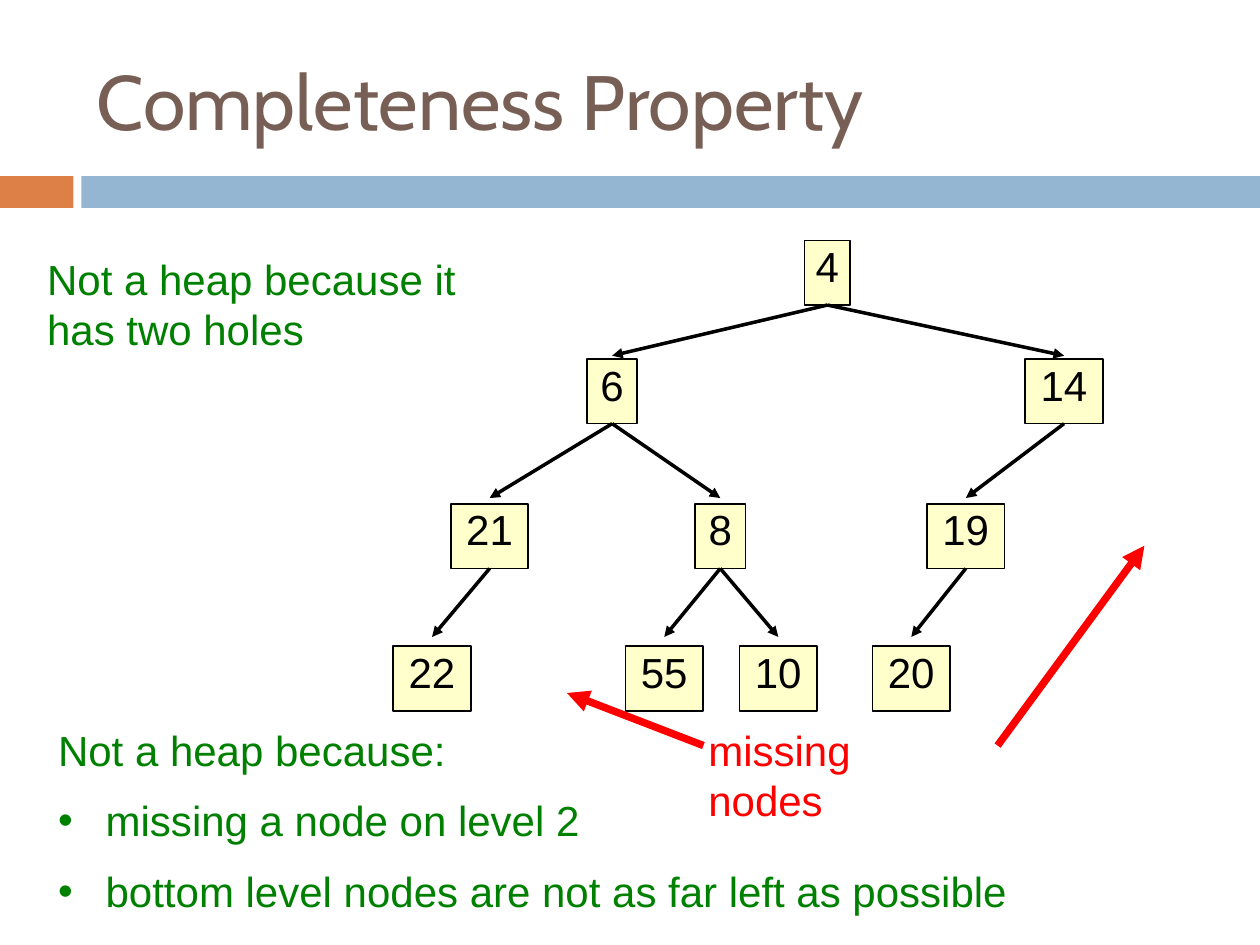
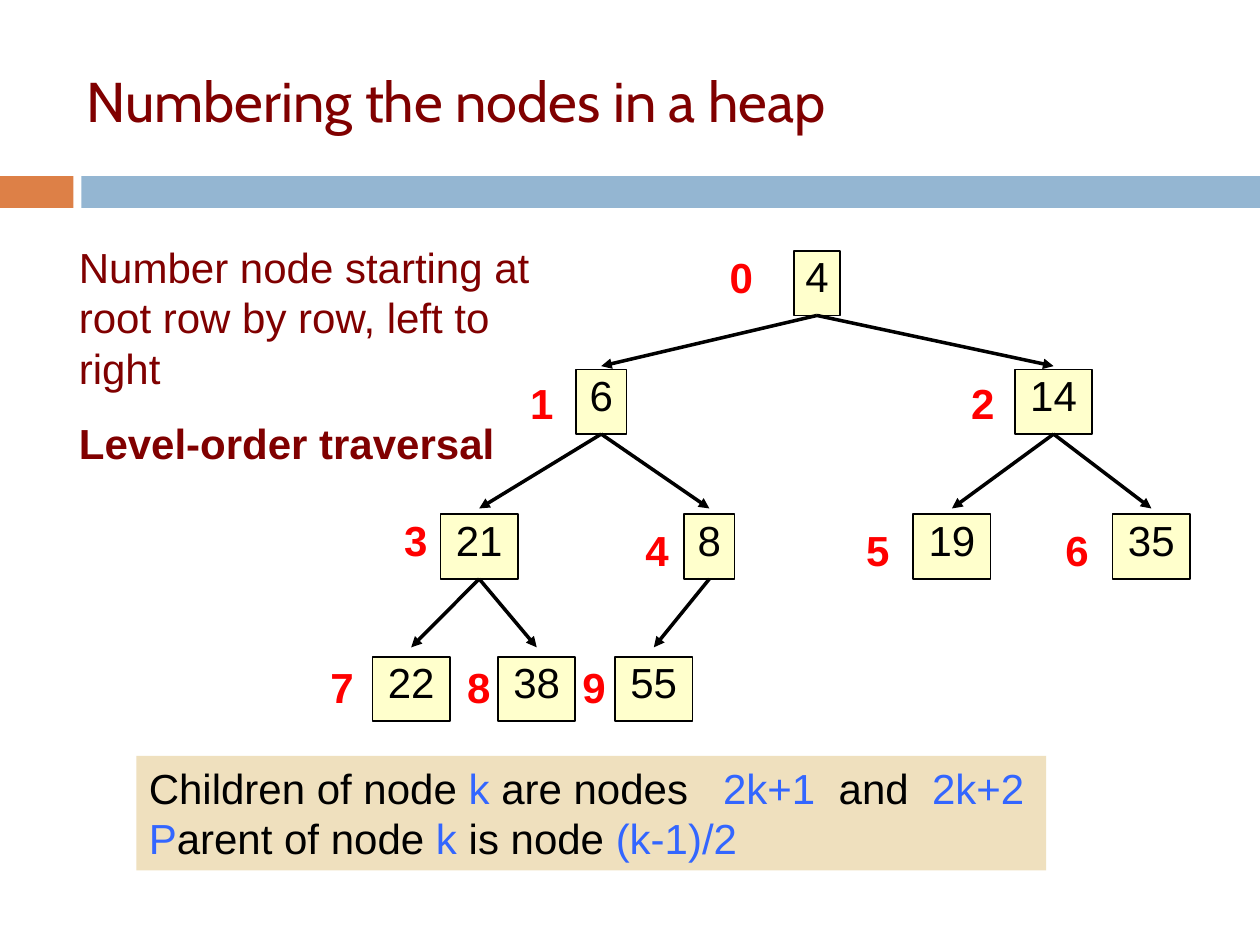
"""Build two slides on heaps: the completeness property and node numbering."""
from lxml import etree
from pptx import Presentation
from pptx.dml.color import RGBColor
from pptx.enum.shapes import MSO_CONNECTOR, MSO_SHAPE
from pptx.enum.text import MSO_ANCHOR, MSO_AUTO_SIZE, PP_ALIGN
from pptx.oxml.ns import qn
from pptx.util import Cm, Pt

RECT = MSO_SHAPE.RECTANGLE
LINE = MSO_CONNECTOR.STRAIGHT
LEFT, MID = PP_ALIGN.LEFT, PP_ALIGN.CENTER
TOP, CENTER = MSO_ANCHOR.TOP, MSO_ANCHOR.MIDDLE
FIXED = MSO_AUTO_SIZE.NONE

BLACK, RED, GREEN, MAROON = "000000", "FF0000", "008000", "800000"
BROWN, BLUE, CREAM, SAND = "775F55", "3366FF", "FFFFCC", "EFE0BE"
ORANGE, STEEL = "DD8047", "94B6D2"

BOX_H = 1.3
ROWS = (4.85, 7.24, 10.16, 13.03)
GAPS = (0, 0.07, 0.12, 0.19)


def paint(hue):
    """Turn a hex string into a colour."""
    return RGBColor.from_string(hue)


def place(shape, left, top, width, height):
    """Move and size a shape in centimetres."""
    shape.left, shape.top = Cm(left), Cm(top)
    shape.width, shape.height = Cm(width), Cm(height)


def block(slide, spot, hue, edge=None):
    """Draw a filled rectangle."""
    shape = slide.shapes.add_shape(RECT, *map(Cm, spot))
    shape.shadow.inherit = False
    shape.fill.solid()
    shape.fill.fore_color.rgb = paint(hue)
    if edge:
        shape.line.color.rgb = paint(edge)
        shape.line.width = Pt(1)
    else:
        shape.line.fill.background()
    return shape


def setup(frame, pads=(0, 0, 0.1, 0), anchor=TOP):
    """Set the wrapping, anchor and insets of a text frame."""
    frame.word_wrap = True
    frame.auto_size = FIXED
    frame.vertical_anchor = anchor
    frame.margin_left, frame.margin_top, frame.margin_right, frame.margin_bottom = map(Cm, pads)


def add_run(para, text, hue, size=24, font="Arial", bold=False, wide=0):
    """Add one formatted run, its letters spaced by wide points."""
    run = para.add_run()
    run.text = text
    run.font.name, run.font.size, run.font.bold = font, Pt(size), bold
    run.font.color.rgb = paint(hue)
    if wide:
        run._r.get_or_add_rPr().set("spc", str(round(wide * 100)))


def shape_para(para, align=LEFT, before=0, margin=0.1, hang=0, mark=None):
    """Set alignment, spacing, indent and bullet."""
    para.alignment = align
    para.space_before = Pt(before)
    props = para._p.get_or_add_pPr()
    props.set("marL", str(Cm(margin)))
    props.set("indent", str(Cm(hang)))
    if mark:
        etree.SubElement(props, qn("a:buChar"), char=mark)
    else:
        etree.SubElement(props, qn("a:buNone"))


def label(slide, spot, text, hue, bold=False):
    """Add a plain text box."""
    frame = slide.shapes.add_textbox(*map(Cm, spot)).text_frame
    setup(frame)
    shape_para(frame.paragraphs[0], before=11.5)
    add_run(frame.paragraphs[0], text, hue, bold=bold)


def arrow(slide, start, end, hue=BLACK, width=2):
    """Draw a straight arrow."""
    link = slide.shapes.add_connector(LINE, *map(Cm, start + end))
    link.line.color.rgb = paint(hue)
    link.line.width = Pt(width)
    etree.SubElement(link.line._get_or_add_ln(), qn("a:tailEnd"), type="triangle")
    etree.SubElement(link._element.spPr, qn("a:effectLst"))
    return link


def node(slide, text, mid, top, width):
    """Draw one tree node centred on mid."""
    box = block(slide, (mid - width / 2, top, width, BOX_H), CREAM, BLACK)
    setup(box.text_frame)
    para = box.text_frame.paragraphs[0]
    shape_para(para, MID, 14)
    add_run(para, text, BLACK)
    return box


def tree(slide, levels, drop=0):
    """Draw a tree from levels of (text, middle, parent)."""
    boxes = {}
    for level, row, gap in zip(levels, ROWS, GAPS):
        top = row + drop
        for text, mid, parent in level:
            width = 1.56 if len(text) > 1 else 1.02 if parent else 0.92
            boxes[text] = node(slide, text, mid, top, width)
            if parent:
                link = arrow(slide, (mid, top - 1), (mid, top - gap))
                link.begin_connect(boxes[parent], 2)


def title(slide, left, text, hue, size):
    """Fill the title placeholder."""
    shape = slide.shapes.title
    place(shape, left, 0.64, 22.66, 2.75)
    setup(shape.text_frame, (0.25, 0.13, 0.25, 0.13), CENTER)
    para = shape.text_frame.paragraphs[0]
    para.alignment = LEFT
    add_run(para, text, hue, size, "Cabin")


def body(slide, spot, lines, hue, before):
    """Fill the body placeholder with (text, bold, mark) lines."""
    shape = slide.placeholders[1]
    place(shape, *spot)
    frame = shape.text_frame
    setup(frame)
    for i, (text, bold, mark) in enumerate(lines):
        para = frame.add_paragraph() if i else frame.paragraphs[0]
        margin, hang = (1.06, -0.96) if mark else (0.1, 0)
        shape_para(para, before=before, margin=margin, hang=hang, mark=mark)
        add_run(para, text, hue, bold=bold)


def bands(slide, layout):
    """Put the two colour bands on the layout."""
    for left, width, hue in ((0, 1.48, ORANGE), (1.64, 23.76, STEEL)):
        band = block(slide, (left, 3.55, width, 0.64), hue)
        layout.shapes._spTree.insert(2, band._element)


def holes(slide):
    """Build the slide on the completeness property."""
    title(slide, 1.7, "Completeness Property", BROWN, 44)
    tree(slide, (
        [("4", 16.68, None)],
        [("6", 12.34, "4"), ("14", 21.45, "4")],
        [("21", 9.87, "6"), ("8", 14.52, "6"), ("19", 19.47, "14")],
        [("22", 8.71, "21"), ("55", 13.39, "8"), ("10", 15.69, "8"), ("20", 18.37, "19")],
    ))
    label(slide, (0.85, 5.11, 8.69, 2.06), "Not a heap because it has two holes", GREEN)
    label(slide, (14.18, 14.6, 3.8, 2.06), "missing nodes", RED)
    body(slide, (1.07, 14.6, 21.79, 3.89), (
        ("Not a heap because:", False, None),
        ("missing a node on level 2", False, "•"),
        ("bottom level nodes are not as far left as possible", False, "•"),
    ), GREEN, 11.5)
    arrow(slide, (14.18, 15.03), (11.43, 13.97), RED, 4.25)
    arrow(slide, (20.11, 15.03), (23.07, 11), RED, 4.25)


def rules(slide):
    """Draw the box with the index rules."""
    box = block(slide, (2.75, 15.24, 18.34, 2.31), SAND)
    frame = box.text_frame
    setup(frame, (0.25, 0.13, 0.25, 0.13))
    lines = (
        (("Children of node ", BLACK), ("k", BLUE), (" are nodes", BLACK),
         (" ", BLACK, 13.34), ("2k+1", BLUE), (" ", BLACK, 6.67), ("and", BLACK),
         (" ", BLACK, 6.67), ("2k+2", BLUE)),
        (("P", BLUE), ("arent of node ", BLACK), ("k ", BLUE),
         ("is node ", BLACK), ("(k-1)/2", BLUE)),
    )
    for i, runs in enumerate(lines):
        para = frame.add_paragraph() if i else frame.paragraphs[0]
        shape_para(para, margin=0)
        for text, hue, *wide in runs:
            add_run(para, text, hue, wide=sum(wide))


def numbers(slide):
    """Build the slide on numbering the nodes."""
    title(slide, 1.49, "Numbering the nodes in a heap", MAROON, 32)
    body(slide, (1.49, 4.87, 9.53, 4.88), (
        ("Number node starting at root row by row, left to right", False, None),
        ("Level-order traversal", True, None),
    ), MAROON, 14)
    tree(slide, (
        [("4", 16.47, None)],
        [("6", 12.12, "4"), ("14", 21.24, "4")],
        [("21", 9.66, "6"), ("8", 14.3, "6"), ("19", 19.19, "14"), ("35", 23.21, "14")],
        [("22", 8.29, "21"), ("38", 10.82, "21"), ("55", 13.18, "8")],
    ), 0.21)
    spots = ((14.61, 5.08), (10.59, 7.62), (19.48, 7.62), (8.05, 10.37), (12.91, 10.58),
             (17.36, 10.58), (21.38, 10.58), (6.56, 13.34), (9.32, 13.34), (11.64, 13.34))
    for i, (left, top) in enumerate(spots):
        label(slide, (left, top, 0.7, 1.02), str(i), RED, True)
    rules(slide)


def main():
    """Build and save the deck."""
    deck = Presentation()
    deck.slide_width, deck.slide_height = Cm(25.4), Cm(19.05)
    layout = deck.slide_layouts[1]
    first, second = (deck.slides.add_slide(layout) for _ in range(2))
    bands(first, layout)
    holes(first)
    numbers(second)
    deck.save("out.pptx")


if __name__ == "__main__":
    main()
